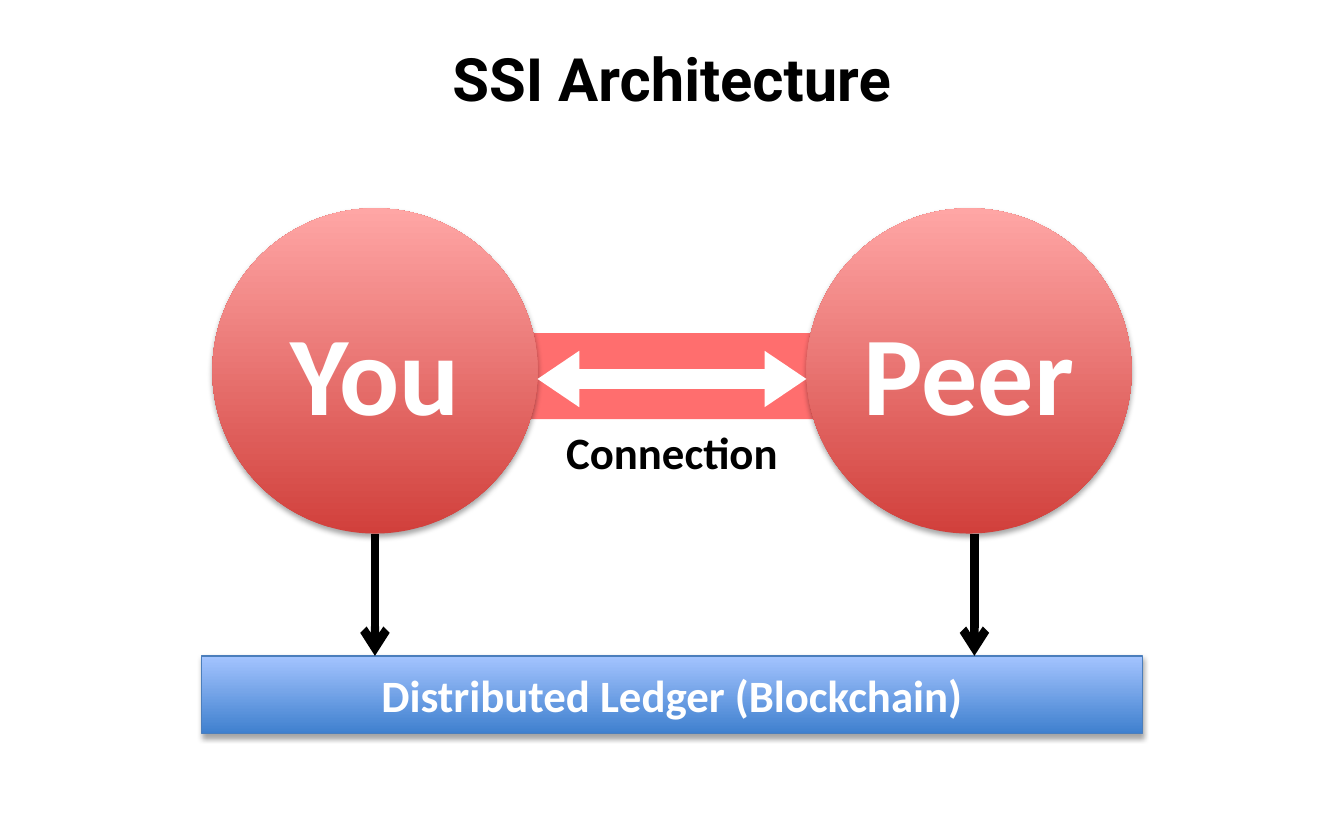
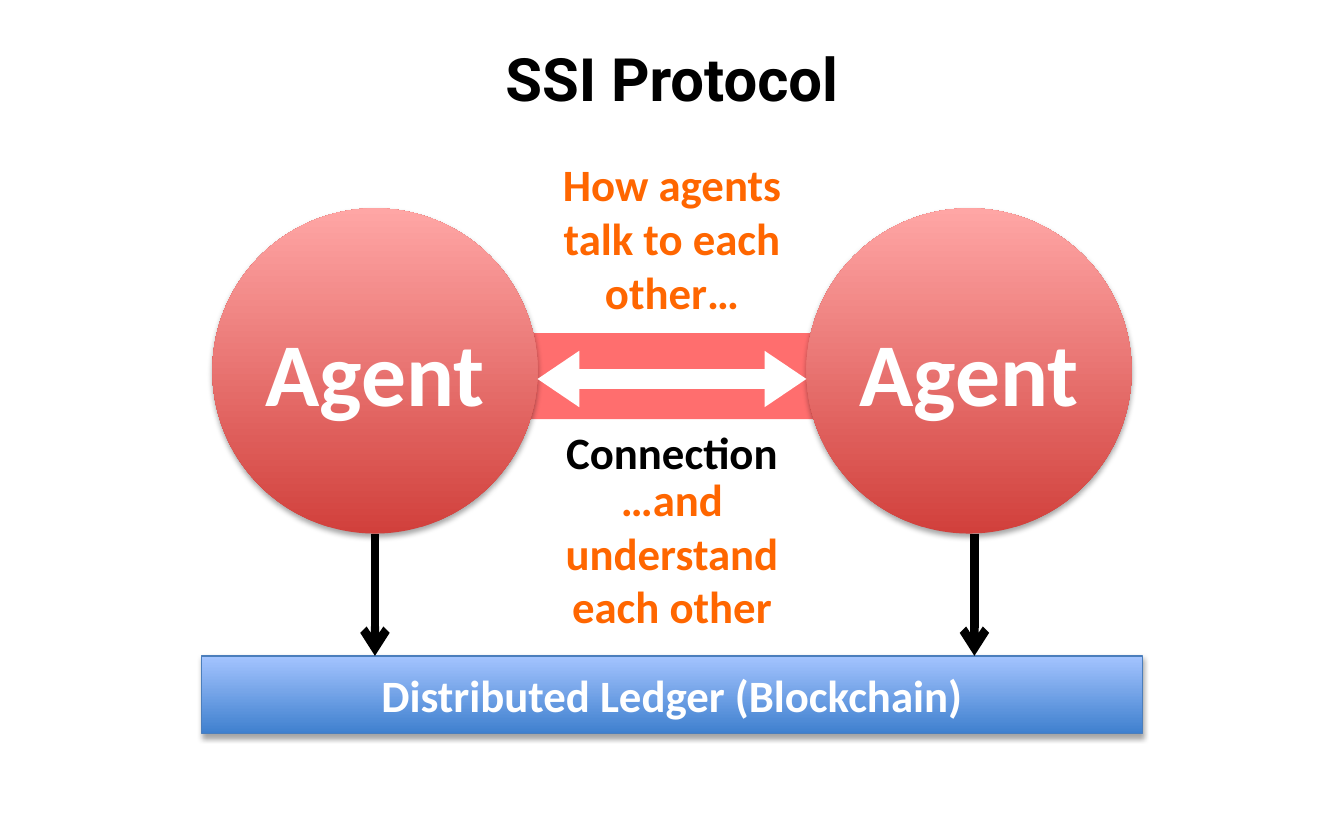
"""Build two slides on the SSI architecture and protocol."""
import pptx
import pptx.util
import pptx.dml.color
import pptx.enum.shapes
import pptx.enum.text
import pptx.oxml
import pptx.oxml.ns
from lxml import etree

Inches, Pt = pptx.util.Inches, pptx.util.Pt
RGBColor = pptx.dml.color.RGBColor
SHAPE = pptx.enum.shapes.MSO_SHAPE
ANCHOR = pptx.enum.text.MSO_ANCHOR
AUTO_SIZE = pptx.enum.text.MSO_AUTO_SIZE
qn = pptx.oxml.ns.qn

BLACK = RGBColor(0x00, 0x00, 0x00)
WHITE = RGBColor(0xFF, 0xFF, 0xFF)
RED = RGBColor(0xFF, 0x00, 0x00)
ORANGE = RGBColor(0xFF, 0x66, 0x00)
BLUE_LINE = RGBColor(0x4B, 0x7E, 0xBC)
RED_GRADIENT = (RGBColor(0xD1, 0x40, 0x3C), RGBColor(0xFF, 0xA6, 0xA5))
BLUE_GRADIENT = (RGBColor(0x3F, 0x80, 0xCE), RGBColor(0xA4, 0xC4, 0xFF))

TITLE_FONT = {"name": "Roboto", "size": Pt(32), "bold": True}
BODY_FONT = {"name": "Calibri", "size": Pt(24), "bold": True}
MIDDLE = {"vertical_anchor": ANCHOR.MIDDLE, "word_wrap": True}
GROWING = {"word_wrap": True, "auto_size": AUTO_SIZE.SHAPE_TO_FIT_TEXT}
NO_SIDE_INSETS = {"margin_left": 0, "margin_right": 0}

CIRCLE_SIZE, CIRCLE_TOP = 2.42, 1.55
CIRCLE_BOTTOM = CIRCLE_TOP + CIRCLE_SIZE
GAP_LEFT, GAP_WIDTH = 4, 2
LEDGER_TOP = 4.88


def set_attrs(obj, values):
    """Set each attribute named in values."""
    for name, value in values.items():
        setattr(obj, name, value)


def write(tf, text, font, color, frame):
    """Put one centred, formatted paragraph in a text frame."""
    set_attrs(tf, frame)
    p = tf.paragraphs[0]
    p.alignment = pptx.enum.text.PP_ALIGN.CENTER
    r = p.add_run()
    r.text = text
    set_attrs(r.font, font)
    r.font.color.rgb = color


def add_title(s, text):
    """Place and fill the title placeholder."""
    sp = s.shapes.title
    set_attrs(sp, {"left": Inches(0.5), "top": Inches(0.14),
                   "width": Inches(9), "height": Inches(0.87)})
    write(sp.text_frame, text, TITLE_FONT, BLACK, MIDDLE)


def add_shape(s, kind, *box):
    """Add a preset shape without line or shadow."""
    sp = s.shapes.add_shape(kind, *map(Inches, box))
    sp.shadow.inherit = False
    sp.line.fill.background()
    return sp


def add_flat(s, kind, color, *box):
    """Add a shape with a solid fill."""
    sp = add_shape(s, kind, *box)
    sp.fill.solid()
    sp.fill.fore_color.rgb = color
    return sp


def add_raised(s, kind, colors, *box):
    """Add a shape with a bottom-to-top gradient and a soft shadow."""
    sp = add_shape(s, kind, *box)
    sp.fill.gradient()
    sp.fill.gradient_angle = 90
    for stop, color in zip(sp.fill.gradient_stops, colors):
        stop.color.rgb = color
    effects = sp._element.spPr.find(qn("a:effectLst"))
    shadow = etree.SubElement(
        effects, qn("a:outerShdw"), blurRad=str(Pt(3.1)), dist=str(Pt(1.8)),
        dir="5400000", rotWithShape="0")
    color = etree.SubElement(shadow, qn("a:srgbClr"), val=str(BLACK))
    etree.SubElement(color, qn("a:alpha"), val="35000")
    return sp


def add_band(s):
    """Add the translucent band behind the circles."""
    sp = add_flat(s, SHAPE.RECTANGLE, RED, 3.58, 2.48, 2.83, 0.64)
    color = sp._element.spPr.find(".//" + qn("a:srgbClr"))
    etree.SubElement(color, qn("a:alpha"), val="57000")


def add_circle(s, left, text, size, frame):
    """Add one party to the connection."""
    sp = add_raised(s, SHAPE.OVAL, RED_GRADIENT,
                    left, CIRCLE_TOP, CIRCLE_SIZE, CIRCLE_SIZE)
    write(sp.text_frame, text, {**BODY_FONT, "size": Pt(size)}, WHITE,
          {**MIDDLE, **frame})


def add_double_arrow(s):
    """Add the two-way arrow between the circles."""
    sp = add_flat(s, SHAPE.LEFT_RIGHT_ARROW, WHITE,
                  GAP_LEFT, 2.61, GAP_WIDTH, 0.42)
    sp.adjustments[0], sp.adjustments[1] = 0.35, 0.74


def add_ledger(s):
    """Add the ledger bar."""
    sp = add_raised(s, SHAPE.RECTANGLE, BLUE_GRADIENT, 1.5, LEDGER_TOP, 7, 0.58)
    sp.line.color.rgb = BLUE_LINE
    sp.line.width = Pt(0.75)
    write(sp.text_frame, "Distributed Ledger (Blockchain)",
          BODY_FONT, WHITE, MIDDLE)


def add_down_arrow(s, x):
    """Add an arrow from a circle to the ledger."""
    cx = s.shapes.add_connector(
        pptx.enum.shapes.MSO_CONNECTOR.STRAIGHT,
        *map(Inches, (x, CIRCLE_BOTTOM, x, LEDGER_TOP)))
    cx.line.color.rgb = BLACK
    cx.line.width = Pt(4.5)
    etree.SubElement(cx.line._get_or_add_ln(), qn("a:tailEnd"), type="arrow")
    etree.SubElement(cx._element.spPr, qn("a:effectLst"))


def add_label(s, text, color, top, height):
    """Add a text label between the circles."""
    sp = s.shapes.add_textbox(
        *map(Inches, (GAP_LEFT, top, GAP_WIDTH, height)))
    write(sp.text_frame, text, BODY_FONT, color, GROWING)


def add_diagram(prs, title, you, peer, size, you_frame):
    """Add a slide with two connected parties above the ledger."""
    s = prs.slides.add_slide(prs.slide_layouts[5])
    add_title(s, title)
    add_band(s)
    add_circle(s, GAP_LEFT + GAP_WIDTH, peer, size, NO_SIDE_INSETS)
    add_circle(s, GAP_LEFT - CIRCLE_SIZE, you, size, you_frame)
    add_double_arrow(s)
    add_ledger(s)
    for x in (2.79, 7.25):
        add_down_arrow(s, x)
    add_label(s, "Connection", BLACK, 3.11, 0.5)
    return s


def main():
    """Build and save the presentation."""
    prs = pptx.Presentation()
    set_attrs(prs, {"slide_width": Inches(10), "slide_height": Inches(6.25)})
    add_diagram(prs, "SSI Architecture", "You", "Peer", 60, {})
    s = add_diagram(prs, "SSI Protocol", "Agent", "Agent", 48, NO_SIDE_INSETS)
    add_label(s, "How agents talk to each other…", ORANGE, 1.12, 1.31)
    add_label(s, "…and understand each other", ORANGE, 3.46, 1.31)
    prs.save("out.pptx")


if __name__ == "__main__":
    main()
